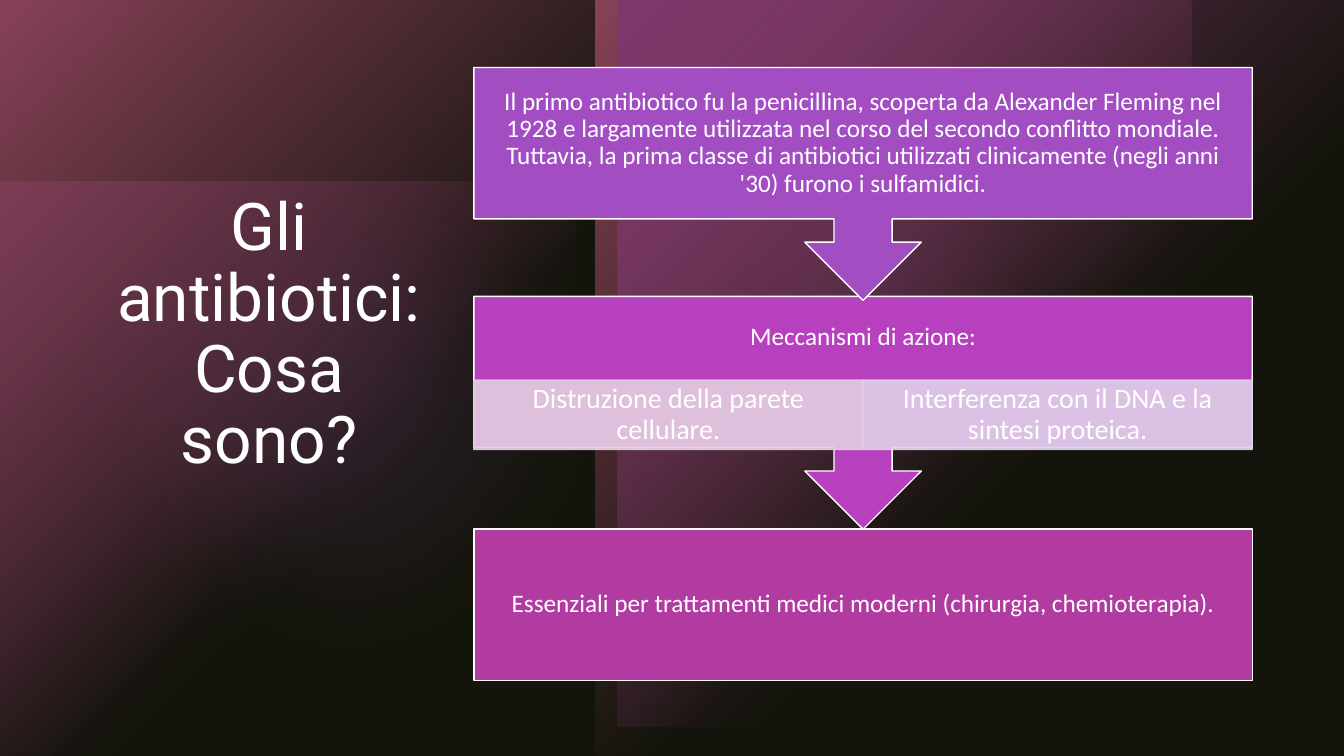
from lxml import etree
from pptx import Presentation
from pptx.dml.color import RGBColor
from pptx.enum.shapes import MSO_SHAPE
from pptx.enum.text import MSO_ANCHOR, PP_ALIGN
from pptx.oxml import parse_xml
from pptx.oxml.ns import qn
from pptx.util import Inches, Pt

RECT, OVAL = MSO_SHAPE.RECTANGLE, MSO_SHAPE.OVAL
CALLOUT = MSO_SHAPE.DOWN_ARROW_CALLOUT
MIDDLE, CENTER = MSO_ANCHOR.MIDDLE, PP_ALIGN.CENTER
NS = "http://schemas.openxmlformats.org/drawingml/2006/main"


def rgb(value):
    return RGBColor.from_string(value)


def write(sp, text, font, size, margins):
    tf = sp.text_frame
    tf.word_wrap, tf.vertical_anchor = True, MIDDLE
    for side, inset in zip(("left", "top", "right", "bottom"), margins):
        setattr(tf, f"margin_{side}", Inches(inset))
    p = tf.paragraphs[0]
    p.alignment, p.line_spacing = CENTER, 0.9
    r = p.add_run()
    r.text = text
    for name, value in {"name": font, "size": Pt(size)}.items():
        setattr(r.font, name, value)
    r.font.color.rgb = rgb("FFFFFF")


prs = Presentation()
prs.slide_width, prs.slide_height = Inches(13.33), Inches(7.5)
s = prs.slides.add_slide(prs.slide_layouts[6])
s.background.fill.solid()
s.background.fill.fore_color.rgb = rgb("000000")

# Backdrop: glows fading from the top left corner, soft discs and a veil
# kind, left, top, width, height, colour, opacity in percent
backdrop = [
    ("glow", 0, 1.8, 5.71, 5.71, "B13BA1", 60),
    ("disc", 6.29, 0.43, 4.72, 4.72, "A34DC3", 60),
    ("disc", 0, 0.56, 6.94, 6.94, "A34DC3", 20),
    ("glow", 0, 0, 5.91, 7.5, "C34D81", 100),
    ("glow", 5.91, 0, 5.91, 7.5, "C34D81", 100),
    ("glow", 6.13, 0, 7.21, 7.21, "B13BA1", 100),
    ("veil", 0, 0, 13.33, 7.5, "30321C", 40),
]
for kind, x, y, w, h, color, opacity in backdrop:
    sp = s.shapes.add_shape(OVAL if kind == "disc" else RECT,
                            Inches(x), Inches(y), Inches(w), Inches(h))
    sp.shadow.inherit = False
    sp.line.fill.background()
    if kind == "glow":
        sp.fill.background()
        stops = "".join(
            f'<a:gs pos="{pos}"><a:srgbClr val="{color}">'
            f'<a:alpha val="{alpha * 1000}"/></a:srgbClr></a:gs>'
            for pos, alpha in ((0, opacity), (60000, 0), (100000, 0)))
        grad = parse_xml(
            f'<a:gradFill xmlns:a="{NS}" rotWithShape="1"><a:gsLst>{stops}</a:gsLst>'
            '<a:path path="circle"><a:fillToRect r="100000" b="100000"/></a:path>'
            '</a:gradFill>')
        spPr = sp._element.spPr
        spPr.replace(spPr.find(qn("a:noFill")), grad)
    else:
        sp.fill.solid()
        sp.fill.fore_color.rgb = rgb(color)
        clr = sp._element.spPr.find(f".//{qn('a:srgbClr')}")
        etree.SubElement(clr, qn("a:alpha"), val=str(opacity * 1000))
    if kind == "disc":
        effects = sp._element.spPr.find(qn("a:effectLst"))
        etree.SubElement(effects, qn("a:softEdge"), rad="1270000")

# Title
title = s.shapes.add_textbox(Inches(0.92), Inches(0.67), Inches(3.5), Inches(6.09))
write(title, "Gli antibiotici: Cosa sono?", "Roboto", 47, (0.1, 0.05, 0.1, 0.82))

# Process steps, drawn from the bottom up
LEFT, WIDTH = 4.7, 7.72
STEP = (0.14, 0.14, 0.14, 0.14)
HALF = (0.16, 0.03, 0.16, 0.03)
steps = [
    (RECT, LEFT, 5.25, WIDTH, 1.5, "B13BA1", "FFFFFF", 18, STEP,
     "Essenziali per trattamenti medici moderni (chirurgia, chemioterapia)."),
    (CALLOUT, LEFT, 2.94, WIDTH, 2.31, "B640BE", "FFFFFF", 18, (0.14, 0.14, 0.14, 0.83),
     "Meccanismi di azione:"),
    (RECT, LEFT, 3.77, WIDTH / 2, 0.69, "E4CEE0", "E4CEE0", 20, HALF,
     "Distruzione della parete cellulare."),
    (RECT, LEFT + WIDTH / 2, 3.77, WIDTH / 2, 0.69, "E0D0E9", "E0D0E9", 20, HALF,
     "Interferenza con il DNA e la sintesi proteica."),
    (CALLOUT, LEFT, 0.67, WIDTH, 2.31, "A34DC3", "FFFFFF", 18, STEP,
     "Il primo antibiotico fu la penicillina, scoperta da Alexander Fleming nel 1928 "
     "e largamente utilizzata nel corso del secondo conflitto mondiale. Tuttavia, la "
     "prima classe di antibiotici utilizzati clinicamente (negli anni '30) furono i "
     "sulfamidici."),
]
for shape, x, y, w, h, fill, line, size, margins, text in steps:
    sp = s.shapes.add_shape(shape, Inches(x), Inches(y), Inches(w), Inches(h))
    sp.shadow.inherit = False
    sp.fill.solid()
    sp.fill.fore_color.rgb = rgb(fill)
    sp.line.color.rgb = rgb(line)
    sp.line.width = Pt(1)
    if margins == HALF:
        for clr in sp._element.spPr.iter(qn("a:srgbClr")):
            etree.SubElement(clr, qn("a:alpha"), val="90000")
    write(sp, text, "Calibri", size, margins)

prs.save("out.pptx")
